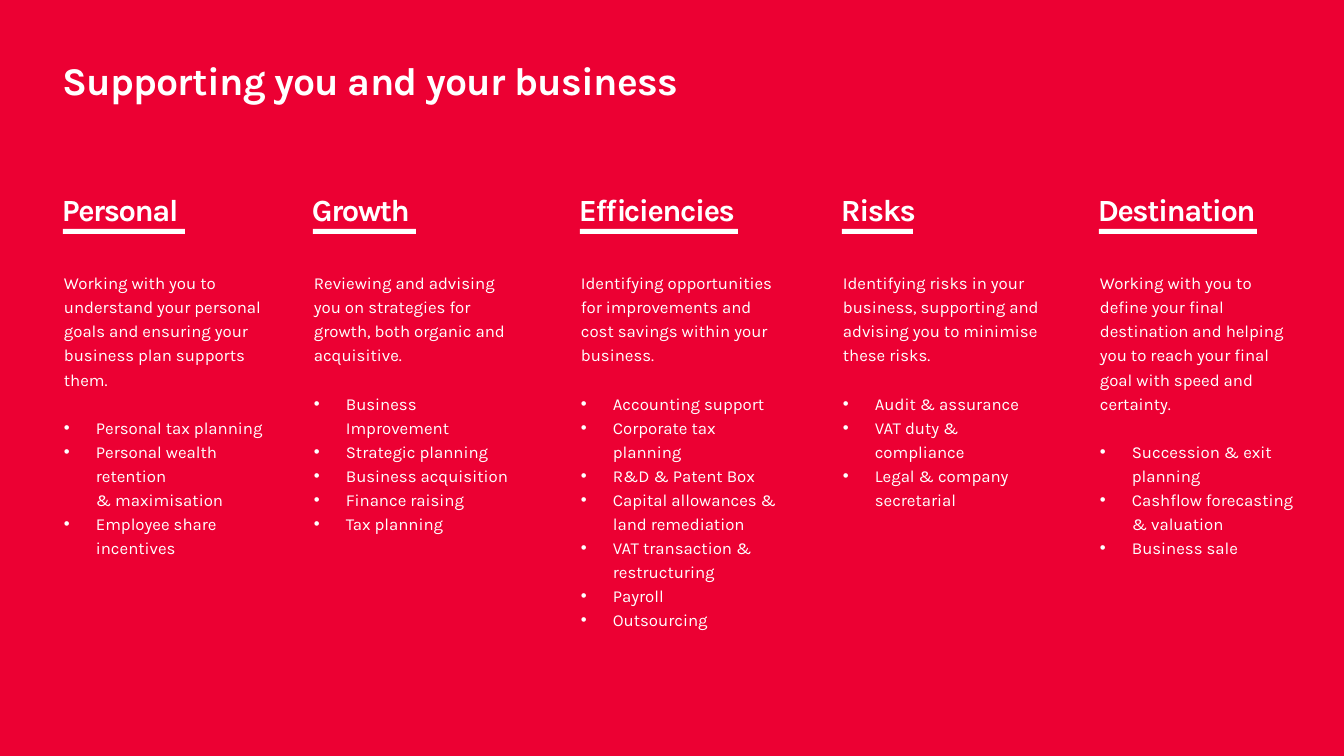
from dataclasses import dataclass

from lxml.etree import SubElement
from pptx import Presentation
from pptx.dml.color import RGBColor as RGB
from pptx.enum.shapes import MSO_SHAPE as Shape
from pptx.enum.text import MSO_ANCHOR as Anchor, MSO_AUTO_SIZE as AutoSize, PP_ALIGN as Align
from pptx.oxml.ns import qn
from pptx.util import Emu, Pt


@dataclass(frozen=True)
class Theme:
    red: RGB = RGB(0xEC, 0x00, 0x33)
    white: RGB = RGB(0xFF, 0xFF, 0xFF)
    font: str = "Karla"
    title: int = 28
    heading: int = 22
    body: int = 12
    leading: float = 17.2


@dataclass(frozen=True)
class Column:
    left: int
    rule_width: int
    lines: int
    heading: str
    intro: tuple
    services: tuple


THEME = Theme()
TITLE = "Supporting you and your business"
COLUMN_WIDTH = 219
LINE_HEIGHT = 24

COLUMNS = (
    Column(52, 122, 12, "Personal",
           ("Working with you to understand your personal goals and ensuring your "
            "business plan supports them.",),
           ("Personal tax planning", "Personal wealth retention\v& maximisation",
            "Employee share incentives")),
    Column(302, 103, 11, "Growth",
           ("Reviewing and advising you on strategies for growth, both organic and "
            "acquisitive.",),
           ("Business Improvement", "Strategic planning", "Business acquisition",
            "Finance raising", "Tax planning")),
    Column(569, 158, 16, "Efficiencies",
           ("Identifying opportunities for improvements and cost savings within your "
            "business.",),
           ("Accounting support", "Corporate tax planning", "R&D & Patent Box",
            "Capital allowances & land remediation", "VAT transaction & restructuring",
            "Payroll", "Outsourcing")),
    Column(831, 71, 10, "Risks",
           ("Identifying risks in your business, supporting and advising you to "
            "minimise these risks.",),
           ("Audit & assurance", "VAT duty & compliance", "Legal & company secretarial")),
    Column(1088, 158, 12, "Destination",
           ("Working with you to define your final destination and helping",
            "you to reach your final goal with speed and certainty."),
           ("Succession & exit planning", "Cashflow forecasting & valuation",
            "Business sale")),
)


def px(length):
    return Emu(round(length * 914400 / 100.8))


def style_runs(paragraph, size, bold=False, tracking=0):
    """Format each run; tracking is in hundredths of a point."""
    for run in paragraph.runs:
        run.font.name = THEME.font
        run.font.size = Pt(size)
        run.font.bold = bold
        run.font.color.rgb = THEME.white
        if tracking:
            run._r.get_or_add_rPr().set("spc", str(tracking))


def add_bullet(paragraph):
    properties = paragraph._p.get_or_add_pPr()
    properties.set("marL", str(px(32)))
    properties.set("indent", str(-px(32)))
    SubElement(properties, qn("a:buFont"), typeface="Arial")
    SubElement(properties, qn("a:buChar"), char="•")


def add_frame(shapes, left, top, height):
    box = shapes.add_textbox(px(left), px(top), px(COLUMN_WIDTH), px(height))
    frame = box.text_frame
    frame.word_wrap = True
    frame.auto_size = AutoSize.SHAPE_TO_FIT_TEXT
    return frame


def add_title(slide):
    title = slide.shapes.title
    title.left, title.top, title.width, title.height = px(52), px(57), px(659), px(66)
    frame = title.text_frame
    frame.text = TITLE
    frame.word_wrap = True
    frame.auto_size = AutoSize.NONE
    frame.vertical_anchor = Anchor.TOP
    line = frame.paragraphs[0]
    line.alignment = Align.LEFT
    line.line_spacing = 0.9
    line.space_before = Pt(0)
    style_runs(line, THEME.title, bold=True, tracking=-50)


def add_heading(shapes, column):
    frame = add_frame(shapes, column.left, 186, 47)
    frame.text = column.heading
    style_runs(frame.paragraphs[0], THEME.heading, bold=True, tracking=-100)


def add_body(shapes, column):
    frame = add_frame(shapes, column.left + 2, 264, 10 + LINE_HEIGHT * column.lines)
    intro_count = len(column.intro)
    for index, wording in enumerate(column.intro + column.services):
        paragraph = frame.add_paragraph() if index else frame.paragraphs[0]
        paragraph.text = wording
        if index >= intro_count:
            add_bullet(paragraph)
        paragraph.line_spacing = Pt(THEME.leading)
        # One line of space parts the services from the intro
        if index == intro_count:
            paragraph.space_before = Pt(THEME.leading)
        style_runs(paragraph, THEME.body)


def add_rule(shapes, column):
    rule = shapes.add_shape(Shape.RECTANGLE, px(column.left + 11), px(229),
                            px(column.rule_width), px(5))
    rule.shadow.inherit = False
    rule.fill.solid()
    rule.fill.fore_color.rgb = THEME.white
    rule.line.fill.background()


def add_column(slide, column):
    shapes = slide.shapes.add_group_shape().shapes
    add_heading(shapes, column)
    add_body(shapes, column)
    add_rule(shapes, column)


def main():
    deck = Presentation()
    deck.slide_width, deck.slide_height = px(1344), px(756)
    slide = deck.slides.add_slide(deck.slide_layouts[5])

    # Red page
    slide.background.fill.solid()
    slide.background.fill.fore_color.rgb = THEME.red

    # Title and the five service columns
    add_title(slide)
    for column in COLUMNS:
        add_column(slide, column)

    deck.save("out.pptx")


if __name__ == "__main__":
    main()
